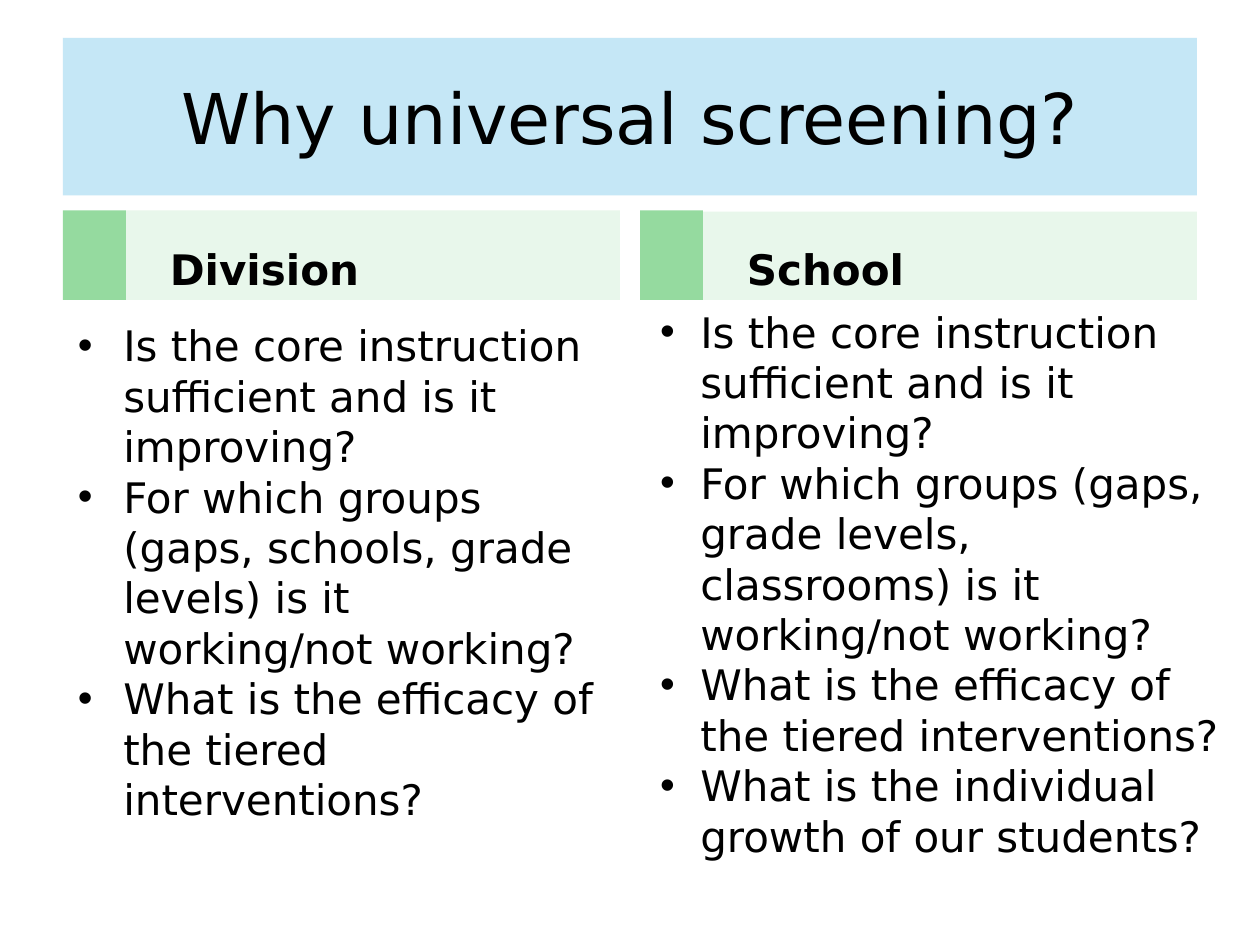
from dataclasses import dataclass

from lxml.etree import SubElement
from pptx import Presentation
from pptx.dml.color import RGBColor
from pptx.enum.shapes import MSO_SHAPE
from pptx.enum.text import MSO_ANCHOR, PP_ALIGN
from pptx.oxml.ns import qn
from pptx.shapes.autoshape import Shape
from pptx.slide import Slide
from pptx.text.text import _Paragraph
from pptx.util import Inches, Pt


@dataclass(frozen=True)
class Theme:
    font: str = "DejaVu Sans"
    ink: str = "000000"
    banner: str = "A9DCF2"
    banner_alpha: int = 67
    accent: str = "95DA9F"
    header: str = "E8F7EB"
    title_size: int = 40
    text_size: int = 24


@dataclass(frozen=True)
class Box:
    col: float
    row: float
    cols: float
    rows: float

    def emu(self) -> tuple[int, int, int, int]:
        return (int(self.col * COL), int(self.row * ROW),
                int(self.cols * COL), int(self.rows * ROW))


@dataclass(frozen=True)
class Panel:
    heading: str
    questions: tuple[str, ...]
    col: float
    header_row: float
    body: Box
    hanging: float


THEME = Theme()
WIDTH, HEIGHT = Inches(10), Inches(7.5)
COL, ROW = WIDTH / 20, HEIGHT / 75
HEADER_TOP, HEADER_BOTTOM = 16.7, 23.8
PANEL_COLS = 8.84

CORE = "Is the core instruction sufficient and is it improving?"
EFFICACY = "What is the efficacy of the tiered interventions?"
PANELS = (
    Panel("Division",
          (CORE,
           "For which groups (gaps, schools, grade levels) is it working/not working?",
           EFFICACY),
          1, HEADER_TOP, Box(1, 24.9, PANEL_COLS, 43.2), 0.36),
    Panel("School",
          (CORE,
           "For which groups (gaps, grade levels, classrooms) is it working/not working?",
           EFFICACY,
           "What is the individual growth of our students?"),
          10.16, 16.8, Box(10.16, HEADER_BOTTOM, 9.58, 50.2), 0.32),
)


def add_block(s: Slide, box: Box, color: str) -> Shape:
    sp = s.shapes.add_shape(MSO_SHAPE.RECTANGLE, *box.emu())
    sp.shadow.inherit = False
    sp.fill.solid()
    sp.fill.fore_color.rgb = RGBColor.from_string(color)
    sp.line.fill.background()
    return sp


def set_alpha(sp: Shape, percent: int) -> None:
    clr = sp.fill._xPr.find(qn("a:solidFill")).find(qn("a:srgbClr"))
    SubElement(clr, qn("a:alpha")).set("val", str(percent * 1000))


def style(p: _Paragraph, size: int, bold: bool = False) -> None:
    for r in p.runs:
        r.font.name = THEME.font
        r.font.size = Pt(size)
        r.font.bold = bold
        r.font.color.rgb = RGBColor.from_string(THEME.ink)


def indent(p: _Paragraph, left: float, hanging: float) -> None:
    pPr = p._p.get_or_add_pPr()
    pPr.set("marL", str(Inches(left)))
    pPr.set("indent", str(-Inches(hanging)))


def add_bullet(p: _Paragraph) -> None:
    pPr = p._p.get_or_add_pPr()
    clr = SubElement(pPr, qn("a:buClr"))
    SubElement(clr, qn("a:srgbClr")).set("val", THEME.ink)
    SubElement(pPr, qn("a:buFont")).set("typeface", "Arial")
    SubElement(pPr, qn("a:buChar")).set("char", "•")


def add_title(s: Slide, text: str) -> None:
    sp = add_block(s, Box(1, 3, 18, 12.5), THEME.banner)
    set_alpha(sp, THEME.banner_alpha)
    tf = sp.text_frame
    tf.text = text
    tf.word_wrap = True
    tf.vertical_anchor = MSO_ANCHOR.MIDDLE
    p = tf.paragraphs[0]
    p.alignment = PP_ALIGN.CENTER
    style(p, THEME.title_size)


def add_header(s: Slide, panel: Panel) -> None:
    add_block(s, Box(panel.col, HEADER_TOP, 1, HEADER_BOTTOM - HEADER_TOP), THEME.accent)
    box = Box(panel.col + 1, panel.header_row, PANEL_COLS - 1,
              HEADER_BOTTOM - panel.header_row)
    tf = add_block(s, box, THEME.header).text_frame
    tf.text = panel.heading
    tf.word_wrap = True
    tf.vertical_anchor = MSO_ANCHOR.BOTTOM
    p = tf.paragraphs[0]
    p.alignment = PP_ALIGN.LEFT
    indent(p, 0.5, 0.25)
    style(p, THEME.text_size, bold=True)


def add_questions(s: Slide, panel: Panel) -> None:
    tf = s.shapes.add_textbox(*panel.body.emu()).text_frame
    tf.text = "\n".join(panel.questions)
    tf.word_wrap = True
    for p in tf.paragraphs:
        indent(p, 0.38, panel.hanging)
        add_bullet(p)
        style(p, THEME.text_size)


def main() -> None:
    prs = Presentation()
    prs.slide_width, prs.slide_height = WIDTH, HEIGHT
    s = prs.slides.add_slide(prs.slide_layouts[6])
    add_title(s, "Why universal screening?")
    for panel in PANELS:
        add_header(s, panel)
        add_questions(s, panel)
    prs.save("out.pptx")


if __name__ == "__main__":
    main()
